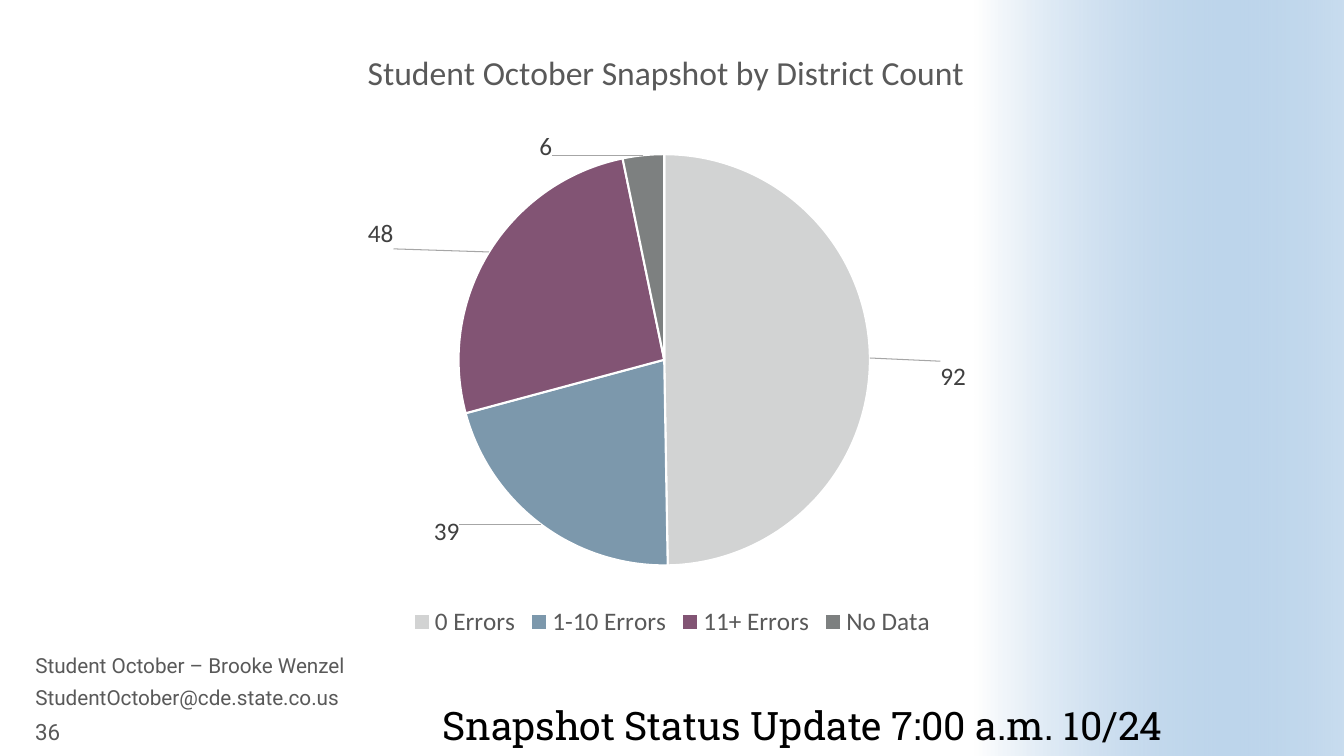
from lxml import etree
from pptx import Presentation
from pptx.chart.data import CategoryChartData
from pptx.dml.color import RGBColor
from pptx.enum.chart import XL_CHART_TYPE, XL_LABEL_POSITION, XL_LEGEND_POSITION
from pptx.enum.shapes import MSO_SHAPE
from pptx.enum.text import MSO_ANCHOR, MSO_AUTO_SIZE, PP_ALIGN
from pptx.oxml import parse_xml
from pptx.oxml.ns import qn
from pptx.util import Inches, Pt

PIE = XL_CHART_TYPE.PIE
OUTSIDE = XL_LABEL_POSITION.OUTSIDE_END
BELOW = XL_LEGEND_POSITION.BOTTOM
RECT = MSO_SHAPE.RECTANGLE
TOP, MIDDLE, LOW = MSO_ANCHOR.TOP, MSO_ANCHOR.MIDDLE, MSO_ANCHOR.BOTTOM
LEFT, RIGHT = PP_ALIGN.LEFT, PP_ALIGN.RIGHT
NO_FIT = MSO_AUTO_SIZE.NONE
WIDE, HIGH = 13.33, 7.5
EDGE = 0.25
GRAY = "595959"


def style(font, name, size, color):
    font.name, font.size, font.bold = name, Pt(size), False
    font.color.rgb = RGBColor.from_string(color)


def lay(host, spot, **vals):
    """Give a chart part a manual layout, in shares of the chart."""
    for old in host.findall(qn("c:layout")):
        host.remove(old)
    layout = etree.Element(qn("c:layout"))
    manual = etree.SubElement(layout, qn("c:manualLayout"))
    for tag, val in vals.items():
        etree.SubElement(manual, qn("c:" + tag)).set("val", str(val))
    host.insert(spot, layout)


prs = Presentation()
prs.slide_width, prs.slide_height = Inches(WIDE), Inches(HIGH)
slide = prs.slides.add_slide(prs.slide_layouts[3])
shapes = slide.shapes

# Fading band on the right, behind everything
band_w = 3.66
band = shapes.add_shape(RECT, Inches(WIDE - band_w), 0, Inches(band_w), Inches(HIGH))
band.shadow.inherit = False
band.line.fill.background()
band.fill.gradient()
band.fill.gradient_angle = 0
for stop, pos, color in zip(band.fill.gradient_stops, (0, 1), ("FFFFFF", "488BC9")):
    stop.position = pos
    stop.color.rgb = RGBColor.from_string(color)
tints = band.element.spPr.findall(".//" + qn("a:srgbClr"))
etree.SubElement(tints[-1], qn("a:alpha")).set("val", "30000")
tree = band.element.getparent()
tree.insert(2, band.element)

# Pie chart: name, count, colour, label shift
slices = [
    ("0 Errors", 92, "D2D3D3", (0.05, 0.03)),
    ("1-10 Errors", 39, "7C98AC", (-0.06, -0.02)),
    ("11+ Errors", 48, "825474", (-0.07, 0)),
    ("No Data", 6, "7D8080", (-0.07, 0.02)),
]
data = CategoryChartData()
data.categories = [row[0] for row in slices]
data.add_series("Series 1", [row[1] for row in slices])
box = [Inches(v) for v in (EDGE, EDGE, 12.83, 6.12)]
chart = shapes.add_chart(PIE, *box, data).chart
style(chart.font, "Calibri", 10, "000000")

chart.has_title = True
head = chart.chart_title.text_frame
head.text = "Student October Snapshot by District Count"
style(head.paragraphs[0].runs[0].font, "Calibri", 24, GRAY)
lay(chart.chart_title._element, 1, xMode="edge", yMode="edge", x=0.26, y=0.03)

chart.has_legend = True
chart.legend.position = BELOW
chart.legend.include_in_layout = False
style(chart.legend.font, "Calibri", 18, GRAY)

plot = chart.plots[0]
plot.vary_by_categories = True
lay(plot._element.getparent(), 0, layoutTarget="inner", xMode="edge",
    yMode="edge", x=0.335, y=0.209, w=0.318, h=0.667)

series = plot.series[0]
labels = series.data_labels
labels.show_value = True
labels.position = OUTSIDE
style(labels.font, "Calibri", 18, "404040")
for i, (name, count, color, (dx, dy)) in enumerate(slices):
    point = series.points[i]
    point.format.fill.solid()
    point.format.fill.fore_color.rgb = RGBColor.from_string(color)
    point.format.line.color.rgb = RGBColor.from_string("FFFFFF")
    point.format.line.width = Pt(1.5)
    label = point.data_label
    label.position = OUTSIDE
    style(label.font, "Calibri", 18, "404040")
    lay(labels._element.findall(qn("c:dLbl"))[i], 1, x=dx, y=dy)
labels._element.append(parse_xml(
    '<c:leaderLines xmlns:c="http://schemas.openxmlformats.org/drawingml/2006/chart"'
    ' xmlns:a="http://schemas.openxmlformats.org/drawingml/2006/main"><c:spPr>'
    '<a:ln w="9525"><a:solidFill><a:srgbClr val="A6A6A6"/></a:solidFill></a:ln>'
    '</c:spPr></c:leaderLines>'))

# Title, contact lines and page number
page = shapes.add_textbox(0, 0, 0, 0)
name, mail = slide.placeholders[1], slide.placeholders[2]
texts = [
    (shapes.title, "Snapshot Status Update 7:00 a.m. 10/24", (4.29, 6.45, 7.24, 0.98),
     ("Roboto Slab", 28, "000000"), LOW, RIGHT, 0.9),
    (name, "Student October – Brooke Wenzel", (EDGE, 6.47, 3.89, 0.31),
     ("Roboto", 14.8, GRAY), TOP, LEFT, 0.8),
    (mail, "StudentOctober@cde.state.co.us", (EDGE, 6.79, 3.89, 0.31),
     ("Roboto", 14.8, GRAY), TOP, LEFT, 0.8),
    (page, "36", (EDGE, 7.1, 0.85, 0.31), ("Roboto", 16, GRAY), MIDDLE, LEFT, 1.0),
]
for shape, text, place, look, anchor, align, gap in texts:
    shape.left, shape.top, shape.width, shape.height = [Inches(v) for v in place]
    frame = shape.text_frame
    frame.text = text
    form = {"word_wrap": True, "auto_size": NO_FIT, "vertical_anchor": anchor}
    if shape is texts[0][0]:
        form.update(dict.fromkeys(
            ("margin_left", "margin_top", "margin_right", "margin_bottom"), 0))
    for key, val in form.items():
        setattr(frame, key, val)
    para = frame.paragraphs[0]
    para.alignment, para.line_spacing, para.space_before = align, gap, Pt(0)
    if shape in (name, mail):
        props = para._p.get_or_add_pPr()
        props.set("marL", "0")
        props.set("indent", "0")
        etree.SubElement(props, qn("a:buNone"))
    style(para.runs[0].font, *look)

prs.save("out.pptx")
